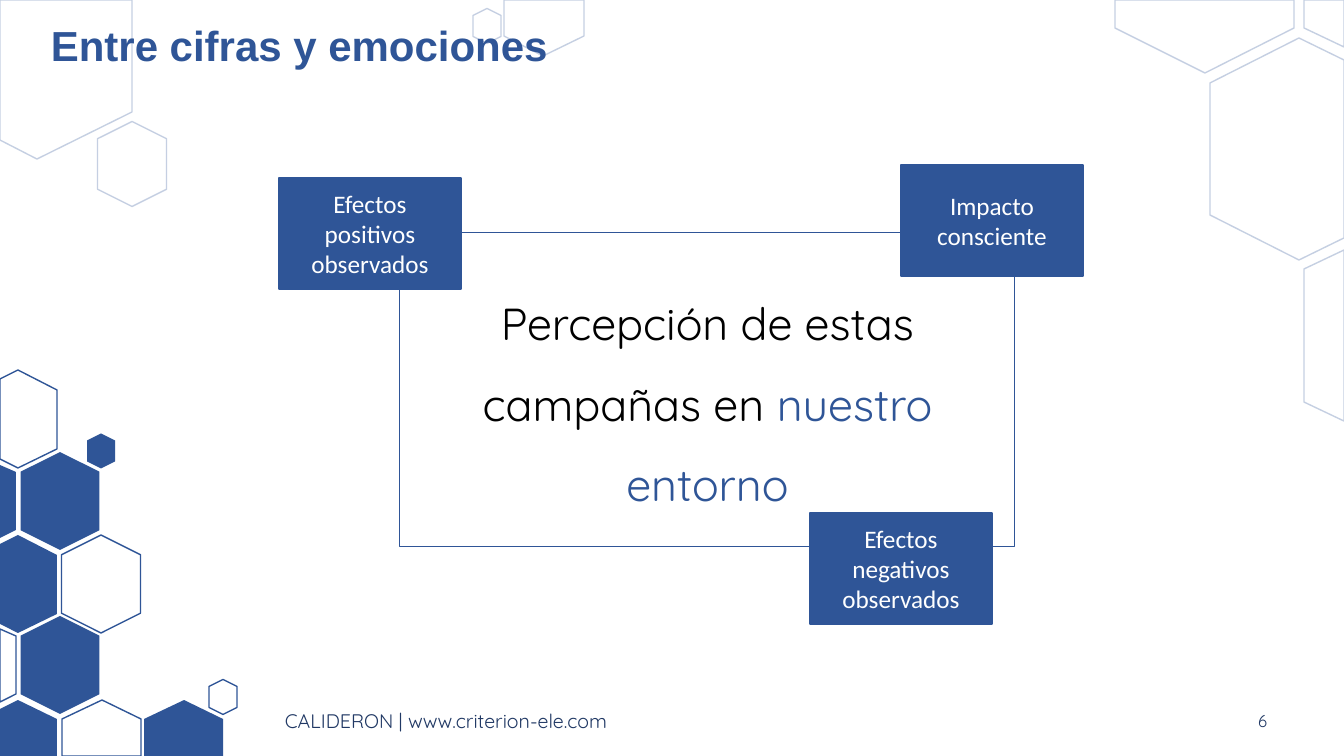
import pptx
import pptx.util
import pptx.dml.color
import pptx.enum.shapes
import pptx.enum.text
import pptx.oxml.ns
import lxml.etree

SCALE = 914400 / 100.8
PAGE_SIZE = (1344, 756)
COLOURS = {"blue": "2F5597", "navy": "203864", "white": "FFFFFF", "black": "000000"}
STYLES = {
    "faint": ("white", "blue", 28),
    "outline": ("white", "blue", 100),
    "solid": ("blue", None, 100),
}

LEFT_HEXAGON = [(18, 370), (57, 390), (57, 449), (18, 468), (0, 459), (0, 379)]
EDGE_SLIVER = [(0, 465), (16, 472), (16, 530), (0, 538)]
BOTTOM_HEXAGON = [(102, 700), (141, 719), (141, 756), (62, 756), (62, 719)]

CUT_HEXAGONS = [
    ("faint", [(504, 0), (584, 0), (584, 36), (543, 56), (504, 36)], 0, 0),
    ("faint", [(1115, 0), (1294, 0), (1294, 28), (1205, 73), (1115, 28)], 0, 0),
    ("faint", [(1304, 0), (1344, 0), (1344, 47), (1304, 28)], 0, 0),
    ("faint", [(1299, 38), (1344, 60), (1344, 238), (1299, 260), (1210, 215), (1210, 83)], 0, 0),
    ("faint", [(0, 0), (132, 0), (132, 112), (37, 159), (0, 140)], 0, 0),
    ("faint", [(1344, 250), (1344, 421), (1304, 402), (1304, 269)], 0, 0),
    ("outline", LEFT_HEXAGON, 0, 0),
    ("solid", LEFT_HEXAGON, 0, 165),
    ("solid", EDGE_SLIVER, 0, 0),
    ("outline", EDGE_SLIVER, 0, 164),
    ("solid", [(18, 700), (57, 719), (57, 756), (0, 756), (0, 709)], 0, 0),
    ("outline", BOTTOM_HEXAGON, 0, 0),
    ("solid", BOTTOM_HEXAGON, 82, 0),
]
WHOLE_HEXAGONS = [
    ("faint", (487, 26), (35, 28)),
    ("faint", (132, 164), (85, 69)),
    ("solid", (60, 501), (98, 79)),
    ("outline", (101, 584), (98, 79)),
    ("solid", (60, 665), (98, 79)),
    ("outline", (223, 697), (35, 28)),
    ("solid", (101, 451), (35, 28)),
]

TEXTS = [
    ((275, 701, 658, 40), "left", 14, "Quicksand", False, 1, [("CALIDERON | www.criterion-ele.com", "navy")]),
    ((1177, 701, 100, 40), "right", 12, "Quicksand", False, 1, [("6", "navy")]),
    ((41, 18, 1165, 60), "left", 30, "Arial", True, 0.9, [("Entre cifras y emociones", "blue")]),
]
QUESTION_FRAME = (400, 233, 615, 314)
QUESTION = [("Percepción de estas campañas en ", "black"), ("nuestro entorno", "blue")]
LABEL_SIZE = (182, 111)
LABELS = [
    ("Efectos positivos observados", (279, 178)),
    ("Efectos negativos observados", (810, 513)),
    ("Impacto consciente", (901, 165)),
]
ALIGNMENTS = {
    "left": pptx.enum.text.PP_ALIGN.LEFT,
    "center": pptx.enum.text.PP_ALIGN.CENTER,
    "right": pptx.enum.text.PP_ALIGN.RIGHT,
}


def emu(*lengths):
    return [round(length * SCALE) for length in lengths]


def colour(name):
    return pptx.dml.color.RGBColor.from_string(COLOURS[name])


def paint(shape, fill, line, opacity=100, width=1):
    shape.shadow.inherit = False
    if fill:
        shape.fill.solid()
        shape.fill.fore_color.rgb = colour(fill)
    else:
        shape.fill.background()
    if not line:
        shape.line.fill.background()
        return
    shape.line.color.rgb = colour(line)
    shape.line.width = pptx.util.Pt(width)
    if opacity < 100:
        tint = shape.line._ln.find(".//" + pptx.oxml.ns.qn("a:srgbClr"))
        alpha = lxml.etree.SubElement(tint, pptx.oxml.ns.qn("a:alpha"))
        alpha.set("val", str(opacity * 1000))


def write(shape, spans, size, font, align="center", bold=False, spacing=1):
    frame = shape.text_frame
    frame.word_wrap = True
    frame.vertical_anchor = pptx.enum.text.MSO_ANCHOR.MIDDLE
    para = frame.paragraphs[0]
    para.alignment = ALIGNMENTS[align]
    para.line_spacing = spacing
    for words, tone in spans:
        span = para.add_run()
        span.text = words
        span.font.size = pptx.util.Pt(size)
        span.font.name = font
        span.font.bold = bold
        span.font.color.rgb = colour(tone)


def add_cut_hexagon(page, style, points, right, down):
    corners = [(x + right, y + down) for x, y in points]
    builder = page.shapes.build_freeform(*corners[0], scale=SCALE)
    builder.add_line_segments(corners[1:], close=True)
    paint(builder.convert_to_shape(), *STYLES[style])


def add_whole_hexagon(page, style, centre, size):
    left, top = (middle - length / 2 for middle, length in zip(centre, size))
    hexagon = page.shapes.add_shape(
        pptx.enum.shapes.MSO_SHAPE.HEXAGON, *emu(left, top, *size))
    hexagon.rotation = 90
    paint(hexagon, *STYLES[style])


def add_rectangle(page, place):
    return page.shapes.add_shape(pptx.enum.shapes.MSO_SHAPE.RECTANGLE, *emu(*place))


def main():
    deck = pptx.Presentation()
    deck.slide_width, deck.slide_height = emu(*PAGE_SIZE)
    page = deck.slides.add_slide(deck.slide_layouts[6])

    for piece in CUT_HEXAGONS:
        add_cut_hexagon(page, *piece)
    for piece in WHOLE_HEXAGONS:
        add_whole_hexagon(page, *piece)

    question = add_rectangle(page, QUESTION_FRAME)
    paint(question, None, "blue", width=0.75)
    write(question, QUESTION, 32, "Quicksand", spacing=1.5)

    for place, align, size, font, bold, spacing, spans in TEXTS:
        box = page.shapes.add_textbox(*emu(*place))
        write(box, spans, size, font, align, bold, spacing)

    for words, corner in LABELS:
        label = add_rectangle(page, corner + LABEL_SIZE)
        paint(label, "blue", "blue")
        write(label, [(words, "white")], 18, "Calibri")

    deck.save("out.pptx")


if __name__ == "__main__":
    main()
